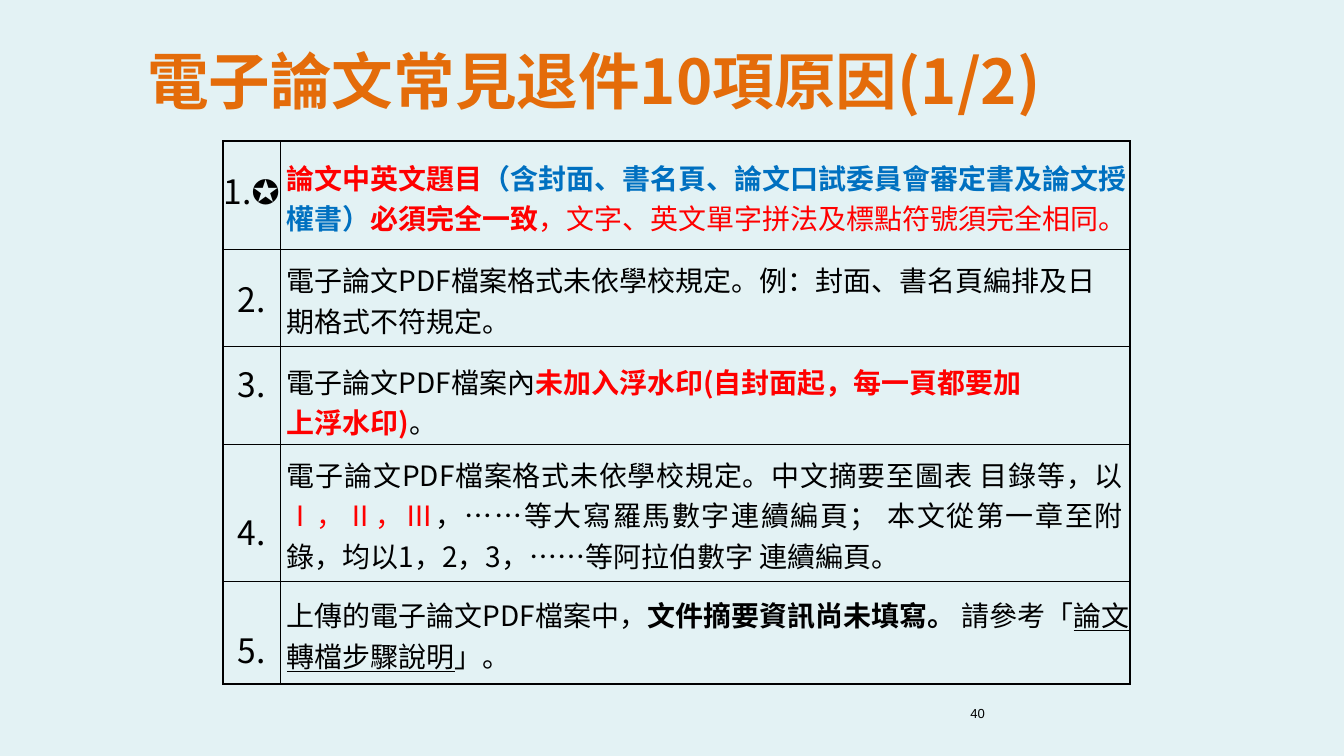
from dataclasses import dataclass

from lxml.etree import SubElement
from pptx import Presentation
from pptx.dml.color import RGBColor
from pptx.enum.text import MSO_ANCHOR, MSO_AUTO_SIZE, PP_ALIGN
from pptx.oxml.ns import qn
from pptx.util import Inches, Pt


@dataclass(frozen=True)
class Theme:
    back: str = "E3F2F4"
    head: str = "E46C0A"
    ink: str = "000000"
    red: str = "FF0000"
    blue: str = "0070C0"
    head_font: str = "Noto Sans CJK JP"
    body_font: str = "Noto Sans CJK TC"
    page_font: str = "Arial"
    head_size: int = 66
    mark_size: int = 36
    body_size: int = 30
    page_size: int = 14
    thin: float = 1
    thick: float = 2.25


T = Theme()
COLS, ROWS = 80, 45

# Run styles: colour, bold, underline
PLAIN = (T.ink, False, False)
BOLD = (T.ink, True, False)
LINK = (T.ink, False, True)
RED = (T.red, False, False)
ALERT = (T.red, True, False)
NOTE = (T.blue, True, False)

# Each reason: row height, mark, mark inset, body top and right insets,
# alignment, paragraphs
REASONS = [
    (6.44, "1.✪", 1.44, 0.24, 0, PP_ALIGN.LEFT, [[
        ("論文中英文題目", ALERT),
        ("（含封面、書名頁、論文口試委員會審定書及論文授權書）", NOTE),
        ("必須完全一致", ALERT),
        ("，文字、英文單字拼法及標點符號須完全相同。", RED)]]),
    (5.76, "2.", 1.44, 0.24, 2, PP_ALIGN.LEFT, [[
        ("電子論文PDF檔案格式未依學校規定。例：封面、書名頁編排及日期格式不符規定。", PLAIN)]]),
    (5.84, "3.", 0.76, 0.76, 0, PP_ALIGN.LEFT, [
        [("電子論文PDF檔案內", PLAIN),
         ("未加入浮水印(自封面起，每一頁都要加", ALERT)],
        [("上浮水印)", ALERT), ("。", PLAIN)]]),
    (8.16, "4.", 3.7, 0.24, 0.4, PP_ALIGN.JUSTIFY, [[
        ("電子論文PDF檔案格式未依學校規定。中文摘要至圖表 目錄等，以", PLAIN),
        ("Ⅰ，Ⅱ，Ⅲ", RED),
        ("，……等大寫羅馬數字連續編頁； 本文從第一章至附錄，"
         "均以1，2，3，……等阿拉伯數字 連續編頁。", PLAIN)]]),
    (6.12, "5.", 2.6, 0.24, 0, PP_ALIGN.LEFT, [[
        ("上傳的電子論文PDF檔案中，", PLAIN),
        ("文件摘要資訊尚未填寫。 ", BOLD),
        ("請參考「", PLAIN),
        ("論文轉檔步驟說明", LINK),
        ("」。", PLAIN)]]),
]


class Deck:
    def __init__(self):
        self.show = Presentation()
        self.show.slide_width = Inches(20)
        self.show.slide_height = Inches(11.25)
        self.slide = self.show.slides.add_slide(self.show.slide_layouts[5])
        fill = self.slide.background.fill
        fill.solid()
        fill.fore_color.rgb = RGBColor.from_string(T.back)

    def wide(self, n):
        return round(self.show.slide_width * n / COLS)

    def high(self, n):
        return round(self.show.slide_height * n / ROWS)

    def area(self, x, y, w, h):
        return self.wide(x), self.high(y), self.wide(w), self.high(h)

    def inset(self, box, top, right=0):
        box.margin_left = box.margin_bottom = 0
        box.margin_top = self.high(top)
        box.margin_right = self.wide(right)

    def style(self, run, size, face, look):
        color, bold, under = look
        font = run.font
        font.size, font.bold, font.underline = Pt(size), bold, under
        font.color.rgb = RGBColor.from_string(color)
        font.name = face
        SubElement(run._r.get_or_add_rPr(), qn("a:ea")).set("typeface", face)

    def indent(self, para, n):
        props = para._p.get_or_add_pPr()
        props.set("marL", str(self.wide(n)))
        # Keep punctuation inside the right edge
        props.set("hangingPunct", "0")

    def line(self, frame, text, size, face, look, left):
        frame.text = text
        frame.word_wrap = True
        frame.vertical_anchor = MSO_ANCHOR.TOP
        frame.auto_size = MSO_AUTO_SIZE.SHAPE_TO_FIT_TEXT
        para = frame.paragraphs[0]
        para.alignment = PP_ALIGN.LEFT
        self.indent(para, left)
        self.style(para.runs[0], size, face, look)
        return para

    def title(self, text, *place):
        head = self.slide.shapes.title
        head.left, head.top, head.width, head.height = self.area(*place)
        self.inset(head.text_frame, 0.08)
        self.line(head.text_frame, text, T.head_size, T.head_font,
                  (T.head, True, False), 0.08)

    def page(self, text, *place):
        box = self.slide.shapes.add_textbox(*self.area(*place))
        self.inset(box.text_frame, 0)
        para = self.line(box.text_frame, text, T.page_size, T.page_font,
                         PLAIN, 0.16)
        para.line_spacing = 1.18

    def edges(self, cell, **sides):
        props = cell._tc.get_or_add_tcPr()
        for side in "LRTB":
            width = T.thick if sides.get(side) else T.thin
            edge = SubElement(props, qn(f"a:ln{side}"), w=str(Pt(width)))
            fill = SubElement(edge, qn("a:solidFill"))
            SubElement(fill, qn("a:srgbClr"), val=T.ink)
        cell.fill.background()

    def mark(self, cell, text, top):
        self.inset(cell, top)
        cell.vertical_anchor = MSO_ANCHOR.TOP
        cell.text_frame.text = text
        para = cell.text_frame.paragraphs[0]
        para.alignment = PP_ALIGN.CENTER
        self.style(para.runs[0], T.mark_size, T.body_font, PLAIN)

    def body(self, cell, paras, top, right, align):
        self.inset(cell, top, right)
        cell.vertical_anchor = MSO_ANCHOR.MIDDLE
        frame = cell.text_frame
        for i, parts in enumerate(paras):
            para = frame.add_paragraph() if i else frame.paragraphs[0]
            para.alignment = align
            self.indent(para, 0.4)
            for text, look in parts:
                run = para.add_run()
                run.text = text
                self.style(run, T.body_size, T.body_font, look)

    def table(self, items, x, y, widths):
        place = self.area(x, y, sum(widths), sum(item[0] for item in items))
        grid = self.slide.shapes.add_table(len(items), 2, *place).table
        grid.first_row = grid.horz_banding = False
        for col, width in zip(grid.columns, widths):
            col.width = self.wide(width)
        last = len(items) - 1
        for i, (tall, label, drop, top, gap, align, paras) in enumerate(items):
            grid.rows[i].height = self.high(tall)
            left, right = grid.cell(i, 0), grid.cell(i, 1)
            self.edges(left, L=True, T=i == 0, B=i == last)
            self.edges(right, R=True, T=i == 0, B=i == last)
            self.mark(left, label, drop)
            self.body(right, paras, top, gap, align)


def main():
    deck = Deck()
    # Heading
    deck.title("電子論文常見退件10項原因(1/2)", 8.68, 2.48, 59.2, 4.52)
    # Page number
    deck.page("40", 57.6, 41.84, 18.4, 2.24)
    # Table of reasons
    deck.table(REASONS, 13.28, 8.4, (3.4, 50.6))
    deck.show.save("out.pptx")


if __name__ == "__main__":
    main()
